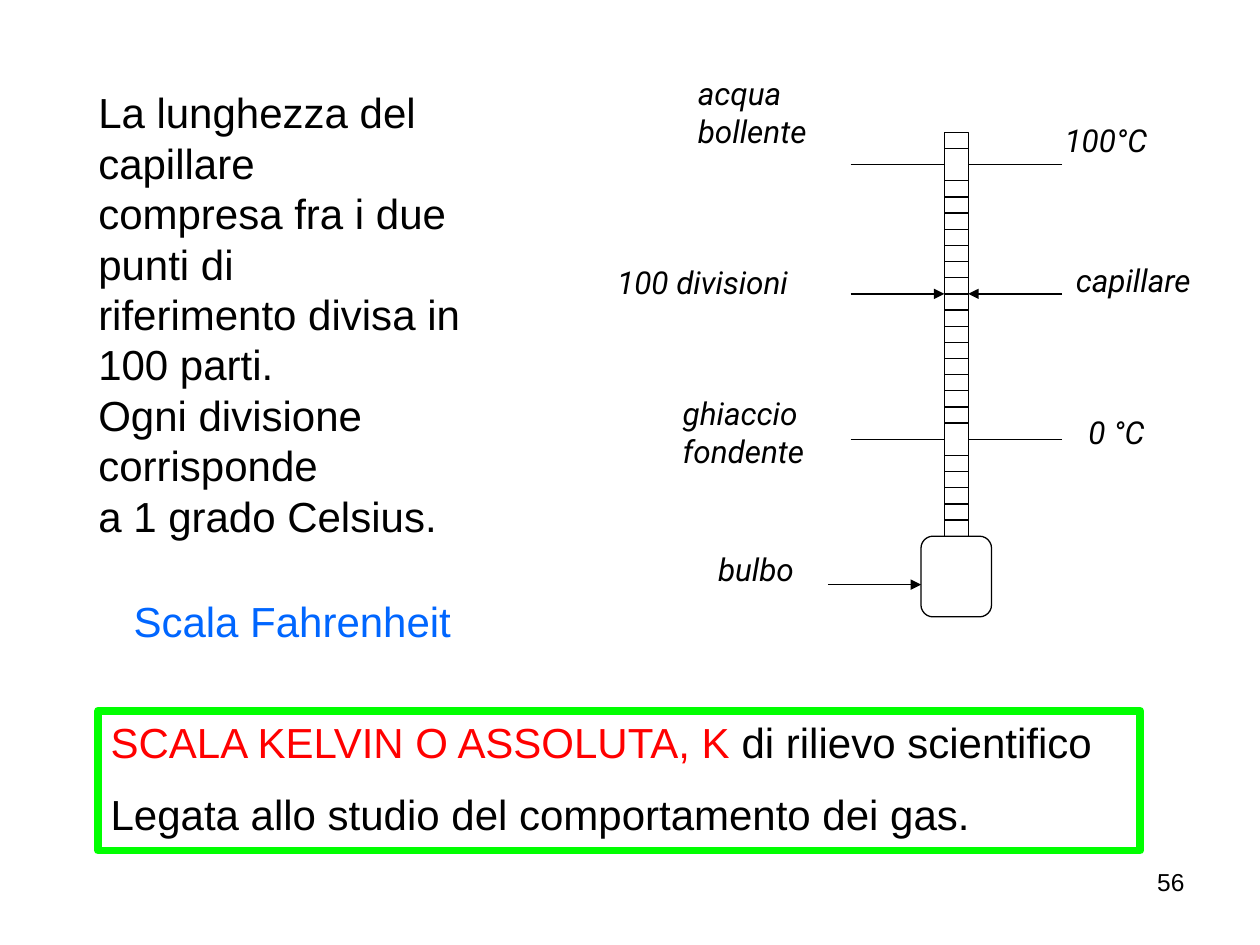
from lxml import etree
from pptx import Presentation
from pptx.dml.color import RGBColor
from pptx.enum.shapes import MSO_CONNECTOR, MSO_SHAPE
from pptx.enum.text import MSO_ANCHOR, MSO_AUTO_SIZE, PP_ALIGN
from pptx.oxml.ns import qn
from pptx.util import Inches, Pt

BLACK = RGBColor(0x00, 0x00, 0x00)
WHITE = RGBColor(0xFF, 0xFF, 0xFF)
RED = RGBColor(0xFF, 0x00, 0x00)
GREEN = RGBColor(0x00, 0xFF, 0x00)
BLUE = RGBColor(0x00, 0x66, 0xFF)
RECT = MSO_SHAPE.RECTANGLE
ROUNDED = MSO_SHAPE.ROUNDED_RECTANGLE
STRAIGHT = MSO_CONNECTOR.STRAIGHT
TOP = MSO_ANCHOR.TOP
NO_FIT = MSO_AUTO_SIZE.NONE
LEFT, RIGHT, JUSTIFY = PP_ALIGN.LEFT, PP_ALIGN.RIGHT, PP_ALIGN.JUSTIFY
COLUMNS, ROWS = 100, 75


class SlideBuilder:
    text_font, label_font = "Arial", "Roboto"
    text_size, label_size, number_size = 24, 18, 14
    thin, thick = 0.75, 4.5

    def __init__(self, deck):
        self.slide = deck.slides.add_slide(deck.slide_layouts[1])
        self.column = deck.slide_width / COLUMNS
        self.row = deck.slide_height / ROWS

    def place(self, *lengths):
        units = (self.column, self.row) * 2
        return [round(length * unit) for length, unit in zip(lengths, units)]

    def add_text(self, shape, paragraphs, size, font, italic=False, align=LEFT, before=0, wrap=True):
        frame = shape.text_frame
        frame.word_wrap = wrap
        frame.auto_size = NO_FIT
        frame.vertical_anchor = TOP
        for index, runs in enumerate(paragraphs):
            paragraph = frame.add_paragraph() if index else frame.paragraphs[0]
            paragraph.alignment = align
            paragraph.space_before = Pt(before)
            for text, color in runs:
                run = paragraph.add_run()
                run.text = text
                run.font.size = Pt(size)
                run.font.name = font
                run.font.italic = italic
                run.font.color.rgb = color

    def placeholder(self, shape, box, paragraphs):
        shape.left, shape.top, shape.width, shape.height = self.place(*box)
        self.add_text(shape, paragraphs, self.text_size, self.text_font)
        for paragraph in shape.text_frame.paragraphs:
            properties = paragraph._p.get_or_add_pPr()
            properties.set("marL", "0")
            properties.set("indent", "0")
            etree.SubElement(properties, qn("a:buNone"))

    def title(self, box, paragraphs):
        self.placeholder(self.slide.shapes.title, box, paragraphs)

    def body(self, box, paragraphs):
        self.placeholder(self.slide.placeholders[1], box, paragraphs)

    def outline(self, kind, box, color, width):
        shape = self.slide.shapes.add_shape(kind, *self.place(*box))
        shape.shadow.inherit = False
        shape.fill.background()
        shape.line.color.rgb = color
        shape.line.width = Pt(width)
        return shape

    def line(self, start, end, arrow=False):
        connector = self.slide.shapes.add_connector(STRAIGHT, *self.place(*start, *end))
        connector.line.color.rgb = BLACK
        connector.line.width = Pt(self.thin)
        if arrow:
            etree.SubElement(connector.line._get_or_add_ln(), qn("a:tailEnd"), type="triangle")
        etree.SubElement(connector._element.spPr, qn("a:effectLst"))

    def label(self, box, lines, wrap=False, framed=False):
        if framed:
            holder = self.outline(RECT, box, WHITE, self.thin)
        else:
            holder = self.slide.shapes.add_textbox(*self.place(*box))
        paragraphs = [[(text, BLACK)] for text in lines]
        self.add_text(holder, paragraphs, self.label_size, self.label_font, italic=True, wrap=wrap)

    def boxed_text(self, box, paragraphs):
        panel = self.outline(RECT, box, GREEN, self.thick)
        self.add_text(panel, paragraphs, self.text_size, self.text_font, align=JUSTIFY, before=12)

    def page_number(self, box, number):
        holder = self.slide.shapes.add_textbox(*self.place(*box))
        self.add_text(holder, [[(number, BLACK)]], self.number_size, self.text_font, align=RIGHT)


def draw_thermometer(builder):
    tube_left, tube_right, tube_top, tube_height = 74.95, 76.85, 10.5, 32.06
    divisions, boiling, middle, freezing = 25, 2, 10, 19
    leader = 7.45
    step = tube_height / divisions

    builder.outline(RECT, (tube_left, tube_top, tube_right - tube_left, tube_height), BLACK, builder.thin)
    bulb = builder.outline(ROUNDED, (73.1, tube_top + tube_height, 5.6, 6.4), BLACK, builder.thin)
    bulb.adjustments[0] = 0.17

    for division in range(1, divisions):
        height = tube_top + division * step
        if division not in (boiling, freezing):
            builder.line((tube_left, height), (tube_right, height))
        if division in (boiling, middle, freezing):
            arrow = division == middle
            builder.line((tube_left - leader, height), (tube_left, height), arrow)
            builder.line((tube_right + leader, height), (tube_right, height), arrow)
    builder.line((65.7, 46.4), (73.1, 46.4), arrow=True)

    builder.label((54.4, 5.4, 14.5, 7.1), ["acqua", "bollente"], wrap=True, framed=True)
    builder.label((83.5, 9.1, 10.8, 4), ["100°C"], wrap=True)
    builder.label((48, 20.4, 15.7, 4), ["100 divisioni"])
    builder.label((84.4, 20.2, 11.9, 4), ["capillare"])
    builder.label((53.2, 30.8, 11.8, 7), ["ghiaccio", "fondente"])
    builder.label((85.4, 32.3, 6.8, 4), ["0 °C"])
    builder.label((56, 43.2, 8.1, 4), ["bulbo"])


def main():
    deck = Presentation()
    deck.slide_width, deck.slide_height = Inches(10), Inches(7.5)
    builder = SlideBuilder(deck)

    explanation = [
        "La lunghezza del capillare",
        "compresa fra i due punti di",
        "riferimento divisa in 100 parti.",
        "Ogni divisione corrisponde",
        "a 1 grado Celsius.",
    ]
    builder.page_number((71.7, 68.3, 23.3, 5.2), "56")
    draw_thermometer(builder)
    builder.body((6.8, 6.4, 36.4, 37.4), [[(text, BLACK)] for text in explanation])
    builder.boxed_text((7.8, 56.4, 82.7, 11.1), [
        [("SCALA KELVIN O ASSOLUTA, K", RED), (" di rilievo scientifico", BLACK)],
        [("Legata allo studio del comportamento dei gas.", BLACK)],
    ])
    builder.title((9.6, 46.8, 32.5, 5), [[("Scala Fahrenheit", BLUE)]])
    deck.save("out.pptx")


if __name__ == "__main__":
    main()
